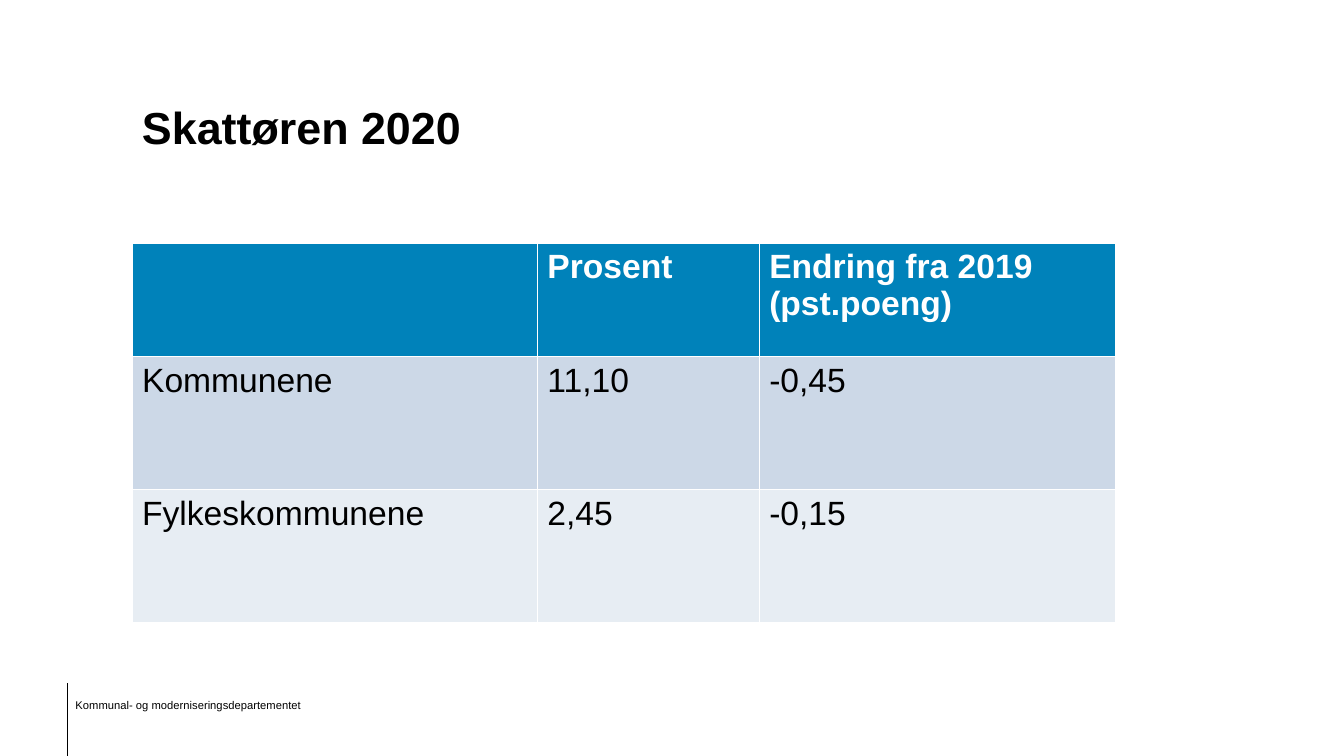
from dataclasses import dataclass

from lxml import etree
from pptx import Presentation
from pptx.dml.color import RGBColor
from pptx.enum import shapes, text
from pptx.oxml.ns import qn
from pptx.util import Inches, Pt


@dataclass(frozen=True)
class Theme:
    font: str = "Arial"
    ink: str = "000000"
    white: str = "FFFFFF"
    header: str = "0082BA"
    bands: tuple = ("CCD8E7", "E7EDF3")
    title_size: int = 32
    table_size: int = 24
    footer_size: int = 8
    rule_width: float = 0.75


THEME = Theme()
TAX_RATES = [
    ["", "Prosent", "Endring fra 2019 (pst.poeng)"],
    ["Kommunene", "11,10", "-0,45"],
    ["Fylkeskommunene", "2,45", "-0,15"],
]


def style_paragraph(paragraph, size, color=THEME.ink, bold=False):
    font = paragraph.font
    font.name = THEME.font
    font.size = Pt(size)
    font.bold = bold
    font.color.rgb = RGBColor.from_string(color)


def add_label(slide, box, wording, size, bold=False, anchor=text.MSO_ANCHOR.TOP):
    shape = slide.shapes.add_textbox(*map(Inches, box))
    frame = shape.text_frame
    frame.word_wrap = True
    frame.vertical_anchor = anchor
    frame.text = wording
    style_paragraph(frame.paragraphs[0], size, bold=bold)
    return frame


def add_footer(slide, box):
    left, top, width, height = box
    rule_left = left + 0.02
    rule = slide.shapes.add_connector(
        shapes.MSO_CONNECTOR.STRAIGHT,
        Inches(rule_left), Inches(top), Inches(rule_left), Inches(top + height))
    rule.line.color.rgb = RGBColor.from_string(THEME.ink)
    rule.line.width = Pt(THEME.rule_width)
    etree.SubElement(rule._element.spPr, qn("a:effectLst"))
    frame = add_label(slide, (left, top + 0.11, width, 0.22),
                      "Kommunal- og moderniseringsdepartementet", THEME.footer_size)
    frame.paragraphs[0].line_spacing = 0.9
    frame.auto_size = text.MSO_AUTO_SIZE.SHAPE_TO_FIT_TEXT


def add_rate_table(slide, box, column_widths, row_heights):
    table = slide.shapes.add_table(
        len(TAX_RATES), len(TAX_RATES[0]), *map(Inches, box)).table
    for column, width in zip(table.columns, column_widths):
        column.width = Inches(width)
    for row, height in zip(table.rows, row_heights):
        row.height = Inches(height)
    for row_index, values in enumerate(TAX_RATES):
        is_header = row_index == 0
        fill = THEME.header if is_header else THEME.bands[(row_index - 1) % 2]
        color = THEME.white if is_header else THEME.ink
        for column_index, value in enumerate(values):
            cell = table.cell(row_index, column_index)
            cell.fill.solid()
            cell.fill.fore_color.rgb = RGBColor.from_string(fill)
            cell.text_frame.text = value
            style_paragraph(cell.text_frame.paragraphs[0],
                            THEME.table_size, color, is_header)


def main():
    presentation = Presentation()
    presentation.slide_width = Inches(13.33)
    presentation.slide_height = Inches(7.5)
    slide = presentation.slides.add_slide(presentation.slide_layouts[6])
    add_footer(slide, (0.65, 6.78, 2.83, 0.72))
    add_label(slide, (1.31, 0.32, 10.71, 1.25), "Skattøren 2020",
              THEME.title_size, bold=True, anchor=text.MSO_ANCHOR.BOTTOM)
    add_rate_table(slide, (1.31, 2.41, 9.77, 3.78),
                   (4.02, 2.2, 3.54), (1.13, 1.32, 1.32))
    presentation.save("out.pptx")


if __name__ == "__main__":
    main()
